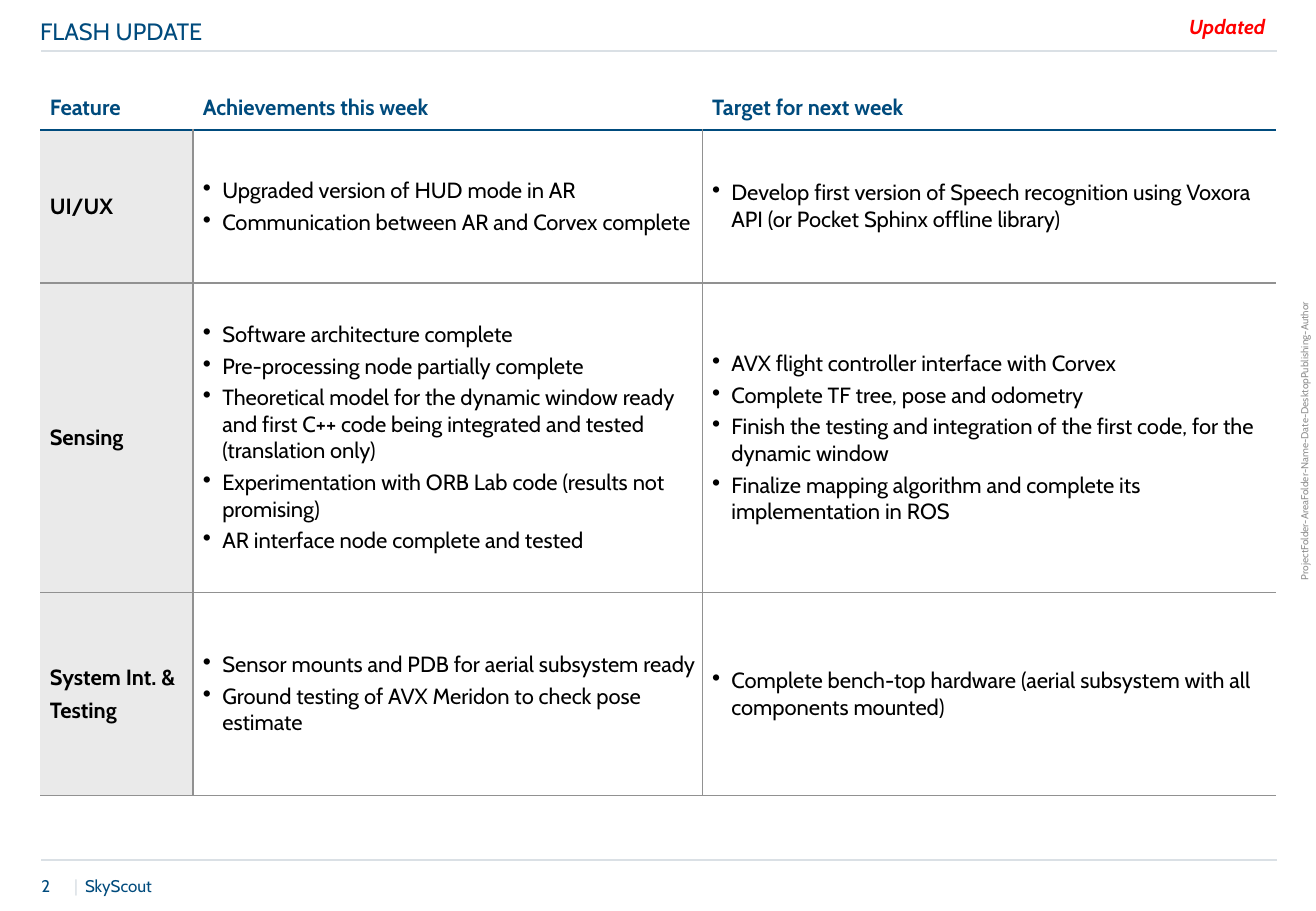
from pptx import Presentation
from pptx import util as u
from pptx.dml.color import RGBColor
from pptx.enum import shapes, text
from pptx.oxml.ns import qn
from lxml import etree

W, H = 10.83, 7.5
FONT = "Cabin"
HUE = dict(navy="004B7D", grey="919191", pale="DAE0E5", shade="EAEAEA",
           black="000000", red="FF0000")
LEFT, RIGHT = 0.34, 10.51

TITLE = "FLASH UPDATE"
HEADS = ["Feature", "Achievements this week", "Target for next week"]
ROWS = [
    (["UI/UX"],
     ["Upgraded version of HUD mode in AR",
      "Communication between AR and Corvex complete"],
     ["Develop first version of Speech recognition using Voxora "
      "API (or Pocket Sphinx offline library)"]),
    (["Sensing"],
     ["Software architecture complete",
      "Pre-processing node partially complete",
      "Theoretical model for the dynamic window ready and first C++ code "
      "being integrated and tested (translation only)",
      "Experimentation with ORB Lab code (results not promising)",
      "AR interface node complete and tested"],
     ["AVX flight controller interface with Corvex",
      "Complete TF tree, pose and odometry",
      "Finish the testing and integration of the first code, for the "
      "dynamic window",
      "Finalize mapping algorithm and complete its implementation in ROS"]),
    (["System Int. &", "Testing"],
     ["Sensor mounts and PDB for aerial subsystem ready",
      "Ground testing of AVX Meridon to check pose estimate"],
     ["Complete bench-top hardware (aerial subsystem with all "
      "components mounted)"]),
]
COLS = [1.26, 4.19, 4.72]
TALL = [0.36, 1.26, 2.55, 1.67]
RULES = [0.42, 7.08]

# text, box, size, colour, bold and italic, centred, turn
NOTES = [
    ("ProjectFolder-AreaFolder-Name-Date-DesktopPublishing-Author",
     (9.45, 3.58, 2.59, 0.1), 6, "grey", False, True, 270),
    ("2", (LEFT, 7.23, 0.2, 0.15), 10, "navy", False, False, 0),
    ("|", (0.61, 7.23, 0.08, 0.15), 10, "pale", False, False, 0),
    ("SkyScout", (0.7, 7.23, 1, 0.15), 10, "navy", False, False, 0),
    ("Updated", (9.66, 0.12, 0.88, 0.2), 12, "red", True, True, 0),
]


def rgb(name):
    return RGBColor.from_string(HUE[name])


def style(para, size, hue, bold=False, slant=False):
    font = para.font
    font.name, font.size, font.bold, font.italic = FONT, u.Pt(size), bold, slant
    font.color.rgb = rgb(hue)


def place(shape, box):
    shape.left, shape.top, shape.width, shape.height = map(u.Inches, box)


def inset(frame, left=0, top=0, right=0, bottom=0):
    frame.margin_left, frame.margin_top = u.Inches(left), u.Inches(top)
    frame.margin_right, frame.margin_bottom = u.Inches(right), u.Inches(bottom)


def bullet(para):
    props = para._p.get_or_add_pPr()
    props.set("marL", str(u.Inches(0.16)))
    props.set("indent", str(-u.Inches(0.16)))
    etree.SubElement(props, qn("a:buSzPct"), val="110000")
    etree.SubElement(props, qn("a:buChar"), char="•")


def border(cell, edges):
    """Draw the given edges (side: colour and points) and clear the rest."""
    props = cell._tc.get_or_add_tcPr()
    for side in "LRTB":
        hue, wide = edges.get(side, (None, 0))
        line = etree.SubElement(props, qn("a:ln" + side), w=str(u.Pt(wide)))
        if hue:
            fill = etree.SubElement(line, qn("a:solidFill"))
            etree.SubElement(fill, qn("a:srgbClr"), val=HUE[hue])
        else:
            etree.SubElement(line, qn("a:noFill"))


def edges(row, col):
    head, thin = ("navy", 1.5), ("grey", 1)
    if row == 0:
        return {"B": head}
    sides = {"T": head if row == 1 else thin, "B": thin}
    if col > 0:
        sides["L"] = thin
    if col < len(COLS) - 1:
        sides["R"] = thin
    return sides


def fill_cell(cell, row, col, lines):
    border(cell, edges(row, col))
    if row and col == 0:
        cell.fill.solid()
        cell.fill.fore_color.rgb = rgb("shade")
    else:
        cell.fill.background()
    cell.vertical_anchor = text.MSO_ANCHOR.MIDDLE
    inset(cell, 0.08, 0.05, 0.04, 0.05)
    frame = cell.text_frame
    frame.text = "\n".join(lines)
    for para in frame.paragraphs:
        if row:
            para.space_before = u.Pt(3 if col else 4)
            if col:
                bullet(para)
        style(para, 13, "black" if row else "navy", bold=not (row and col))


def add_grid(slide):
    data = [[[head] for head in HEADS]] + ROWS
    table = slide.shapes.add_table(
        len(TALL), len(COLS), u.Inches(0.33), u.Inches(0.71),
        u.Inches(sum(COLS)), u.Inches(sum(TALL))).table
    table.first_row = table.horz_banding = False
    for part, wide in zip(table.columns, COLS):
        part.width = u.Inches(wide)
    for part, tall in zip(table.rows, TALL):
        part.height = u.Inches(tall)
    for row, cells in enumerate(data):
        for col, lines in enumerate(cells):
            fill_cell(table.cell(row, col), row, col, lines)


def add_rule(slide, y):
    line = slide.shapes.add_connector(
        shapes.MSO_CONNECTOR.STRAIGHT,
        u.Inches(LEFT), u.Inches(y), u.Inches(RIGHT), u.Inches(y))
    line.line.color.rgb = rgb("pale")
    line.line.width = u.Pt(1)
    etree.SubElement(line._element.spPr, qn("a:effectLst"))


def add_note(slide, words, box, size, hue, strong, mid, turn):
    shape = slide.shapes.add_textbox(*map(u.Inches, box))
    shape.rotation = turn
    frame = shape.text_frame
    frame.word_wrap = True
    inset(frame)
    frame.text = words
    para = frame.paragraphs[0]
    para.alignment = text.PP_ALIGN.CENTER if mid else text.PP_ALIGN.LEFT
    if not strong:
        para.line_spacing = 0.9
    style(para, size, hue, strong, strong)


def add_title(slide):
    title = slide.shapes.title
    place(title, (0.33, 0.09, sum(COLS), 0.33))
    frame = title.text_frame
    frame.text = TITLE
    frame.auto_size = text.MSO_AUTO_SIZE.NONE
    frame.vertical_anchor = text.MSO_ANCHOR.MIDDLE
    inset(frame, top=0.04, bottom=0.04)
    frame.paragraphs[0].alignment = text.PP_ALIGN.LEFT
    style(frame.paragraphs[0], 14, "navy")


def main():
    deck = Presentation()
    deck.slide_width, deck.slide_height = u.Inches(W), u.Inches(H)
    slide = deck.slides.add_slide(deck.slide_layouts[5])
    add_title(slide)
    for y in RULES:
        add_rule(slide, y)
    add_grid(slide)
    for note in NOTES:
        add_note(slide, *note)
    deck.save("out.pptx")


if __name__ == "__main__":
    main()
